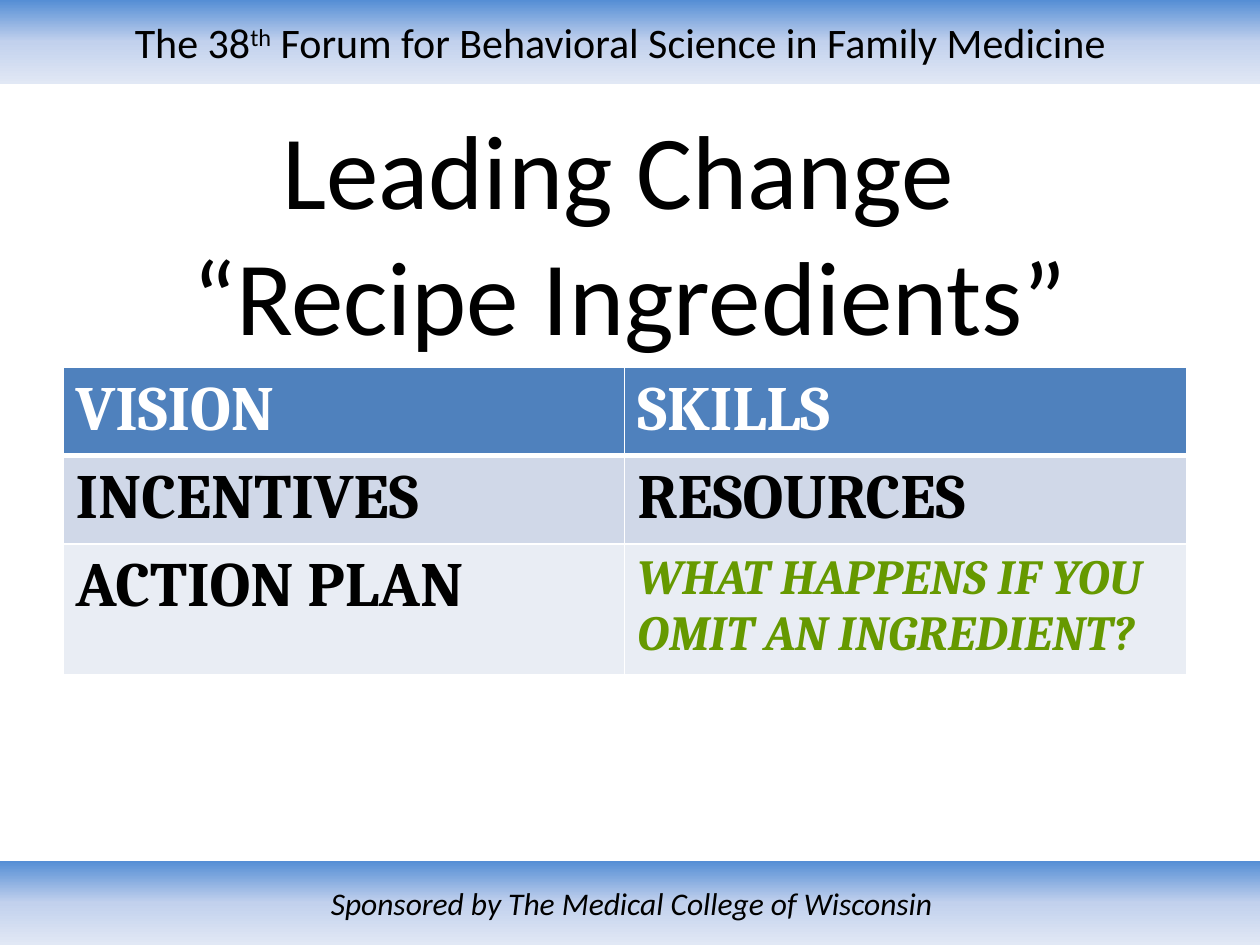
from copy import deepcopy

from lxml.etree import SubElement
from pptx import Presentation
from pptx.dml.color import RGBColor
from pptx.enum.text import MSO_ANCHOR, PP_ALIGN
from pptx.oxml import parse_xml
from pptx.oxml.ns import nsdecls, qn
from pptx.util import Pt

COLORS = {
    "black": "000000",
    "white": "FFFFFF",
    "green": "669900",
    "header": "4F81BD",
    "band_dark": "D0D8E8",
    "band_light": "E9EDF4",
    "bar_top": "558ED5",
    "bar_middle": "C2D1ED",
    "bar_bottom": "E1E8F5",
}
BODY_FONT, TABLE_FONT = "Calibri", "Cambria"


def rgb(name):
    return RGBColor.from_string(COLORS[name])


class SlideBuilder:
    def __init__(self, slide):
        self.slide = slide

    def run(self, p, text, size, color="black", font=BODY_FONT,
            bold=False, italic=False, baseline=0):
        """Add one run; baseline is a percentage, positive for superscript."""
        r = p.add_run()
        r.text = text
        r.font.name, r.font.size = font, Pt(size)
        r.font.bold, r.font.italic = bold, italic
        r.font.color.rgb = rgb(color)
        if baseline:
            r._r.get_or_add_rPr().set("baseline", str(baseline * 1000))

    def centered_paragraph(self, shape):
        tf = shape.text_frame
        tf.word_wrap = True
        tf.vertical_anchor = MSO_ANCHOR.MIDDLE
        p = tf.paragraphs[0]
        p.alignment = PP_ALIGN.CENTER
        return p

    def bar(self, top, width, height):
        """Add a gradient band and return it with its paragraph."""
        sp = self.slide.shapes.add_shape(1, Pt(0), Pt(top), Pt(width), Pt(height))
        sp.shadow.inherit = False
        sp.line.fill.background()
        sp.fill.gradient()
        sp.fill.gradient_angle = 270
        stops = sp._element.spPr.find(".//" + qn("a:gsLst"))
        stops.insert(1, deepcopy(stops[0]))
        names = ("bar_top", "bar_middle", "bar_bottom")
        for stop, name, position in zip(sp.fill.gradient_stops, names, (0, 0.5, 1)):
            stop.color.rgb = rgb(name)
            stop.position = position
        return sp, self.centered_paragraph(sp)

    def title(self, lines, left, top, width, height, size):
        box = self.slide.shapes.add_textbox(Pt(left), Pt(top), Pt(width), Pt(height))
        p = self.centered_paragraph(box)
        for i, line in enumerate(lines):
            if i:
                p.add_line_break()
            self.run(p, line, size)

    def borders(self, cell, **widths):
        """Set white borders; keys are L, R, T and B, widths in points."""
        tc_pr = cell._tc.get_or_add_tcPr()
        for i, (side, width) in enumerate(widths.items()):
            ln = parse_xml(f'<a:ln{side} {nsdecls("a")} w="{Pt(width)}"/>')
            fill = SubElement(ln, qn("a:solidFill"))
            SubElement(fill, qn("a:srgbClr")).set("val", COLORS["white"])
            tc_pr.insert(i, ln)

    def table(self, rows, left, top, width, heights, fills):
        """Add a table whose cells are given as (text, run style)."""
        frame = self.slide.shapes.add_table(
            len(rows), len(rows[0]), Pt(left), Pt(top), Pt(width), Pt(sum(heights)))
        table = frame.table
        for i, (row, height, fill) in enumerate(zip(rows, heights, fills)):
            table.rows[i].height = Pt(height)
            for j, (text, style) in enumerate(row):
                cell = table.cell(i, j)
                cell.fill.solid()
                cell.fill.fore_color.rgb = rgb(fill)
                self.borders(cell, L=1, R=1, T=3 if i == 1 else 1, B=3 if i == 0 else 1)
                self.run(cell.text_frame.paragraphs[0], text,
                         font=TABLE_FONT, bold=True, **style)


def main():
    prs = Presentation()
    prs.slide_width, prs.slide_height = Pt(720), Pt(540)
    s = SlideBuilder(prs.slides.add_slide(prs.slide_layouts[6]))

    header, p = s.bar(0, 720, 48)
    header.text_frame.margin_right = Pt(18)
    s.run(p, "The 38", 24)
    s.run(p, "th", 24, baseline=30)
    s.run(p, " Forum for Behavioral Science in Family Medicine", 24)

    _, p = s.bar(492, 722, 48)
    s.run(p, "Sponsored by The Medical College of Wisconsin", 18, italic=True)

    s.title(["Leading Change ", "“Recipe Ingredients”"], 36, 78, 648, 108, 60)

    head = {"size": 36, "color": "white"}
    body = {"size": 36}
    question = {"size": 28, "color": "green", "italic": True}
    s.table(
        [
            [("VISION", head), ("SKILLS", head)],
            [("INCENTIVES", body), ("RESOURCES", body)],
            [("ACTION PLAN", body),
             ("WHAT HAPPENS IF YOU OMIT AN INGREDIENT?", question)],
        ],
        36, 210, 642, (48, 48, 71), ("header", "band_dark", "band_light"))

    prs.save("out.pptx")


if __name__ == "__main__":
    main()
